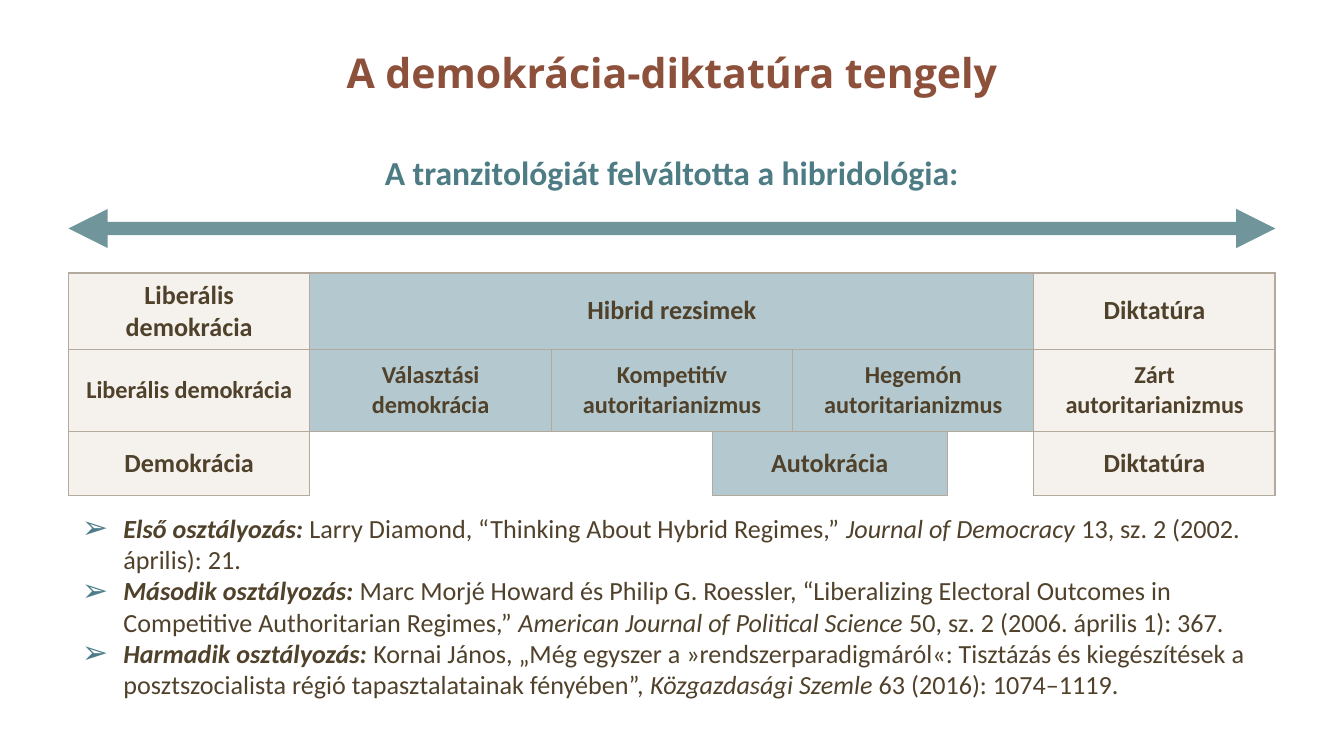
from lxml import etree
from pptx import Presentation
from pptx.dml.color import RGBColor
from pptx.enum.shapes import MSO_CONNECTOR
from pptx.enum.text import MSO_ANCHOR, MSO_AUTO_SIZE, PP_ALIGN
from pptx.oxml.ns import qn
from pptx.util import Inches, Pt

STRAIGHT = MSO_CONNECTOR.STRAIGHT
MIDDLE, TOP = MSO_ANCHOR.MIDDLE, MSO_ANCHOR.TOP
FIT_SHAPE = MSO_AUTO_SIZE.SHAPE_TO_FIT_TEXT
CENTER, LEFT = PP_ALIGN.CENTER, PP_ALIGN.LEFT

COLORS = {
    "title": "8D503B",
    "teal": "4D7C84",
    "bullet": "4D7C8B",
    "text": "50412B",
    "border": "B3A99D",
    "pole": "EFEAE4",
    "hybrid": "6B95A1",
}
ALPHA = {"pole": 60, "hybrid": 50}
NO_STYLE = "{2D5ABB26-0587-4C30-8999-92F81FD0307C}"
BODY_FONT = "Calibri"

WIDTH = 10
HEIGHT = WIDTH * 9 / 16
UNIT = 8.98 / 5
COLUMNS = [UNIT, UNIT, 1.2, UNIT - 1.2, 1.15, UNIT - 1.15, UNIT]
ROWS = [
    (0.51, 14, [("Liberális demokrácia", 1, "pole"), ("Hibrid rezsimek", 5, "hybrid"),
                ("Diktatúra", 1, "pole")]),
    (0.61, 13, [("Liberális demokrácia", 1, "pole"), ("Választási demokrácia", 1, "hybrid"),
                ("Kompetitív autoritarianizmus", 2, "hybrid"),
                ("Hegemón autoritarianizmus", 2, "hybrid"),
                ("Zárt autoritarianizmus", 1, "pole")]),
    (0.48, 14, [("Demokrácia", 1, "pole"), ("", 1, None), ("", 1, None),
                ("Autokrácia", 2, "hybrid"), ("", 1, None), ("Diktatúra", 1, "pole")]),
]
SOURCES = [
    [("Első osztályozás: ", True, True),
     ("Larry Diamond, “Thinking About Hybrid Regimes,” ", False, False),
     ("Journal of Democracy ", False, True),
     ("13, sz. 2 (2002. április): 21.", False, False)],
    [("Második osztályozás:", True, True),
     (" Marc Morjé Howard és Philip G. Roessler, “Liberalizing Electoral Outcomes in "
      "Competitive Authoritarian Regimes,” ", False, False),
     ("American Journal of Political Science ", False, True),
     ("50, sz. 2 (2006. április 1): 367.", False, False)],
    [("Harmadik osztályozás:", True, True),
     (" Kornai János, „Még egyszer a »rendszerparadigmáról«: Tisztázás és kiegészítések a "
      "posztszocialista régió tapasztalatainak fényében”, ", False, False),
     ("Közgazdasági Szemle ", False, True),
     ("63 (2016): 1074–1119.", False, False)],
]


def add(parent, tag, **attrs):
    return etree.SubElement(parent, qn(tag), attrs)


class Deck:
    def __init__(self, width, height):
        self.prs = Presentation()
        self.prs.slide_width, self.prs.slide_height = Inches(width), Inches(height)
        self.s = self.prs.slides.add_slide(self.prs.slide_layouts[6])

    def style(self, r, size, color, bold=True, italic=False, font=BODY_FONT):
        r.font.size, r.font.name = Pt(size), font
        r.font.bold, r.font.italic = bold, italic
        r.font.color.rgb = RGBColor.from_string(COLORS[color])

    def frame(self, box, anchor=TOP, grow=True):
        tf = self.s.shapes.add_textbox(*map(Inches, box)).text_frame
        tf.word_wrap, tf.vertical_anchor = True, anchor
        if grow:
            tf.auto_size = FIT_SHAPE
        return tf

    def heading(self, text, box, size, color, font=BODY_FONT, anchor=TOP, grow=True):
        tf = self.frame(box, anchor, grow)
        tf.text = text
        p = tf.paragraphs[0]
        p.alignment = CENTER
        self.style(p.runs[0], size, color, font=font)

    def bullets(self, items, box, size):
        tf = self.frame(box)
        for i, parts in enumerate(items):
            p = tf.add_paragraph() if i else tf.paragraphs[0]
            p.alignment = LEFT
            pPr = p._p.get_or_add_pPr()
            pPr.set("marL", str(Inches(0.31)))
            pPr.set("indent", str(-Inches(0.31)))
            add(add(pPr, "a:buClr"), "a:srgbClr", val=COLORS["bullet"])
            add(pPr, "a:buSzPct", val="120000")
            add(pPr, "a:buFont", typeface=BODY_FONT)
            add(pPr, "a:buChar", char="➢")
            for text, bold, italic in parts:
                r = p.add_run()
                r.text = text
                self.style(r, size, "text", bold, italic)

    def double_arrow(self, x1, x2, y, width, color, alpha):
        sp = self.s.shapes.add_connector(STRAIGHT, Inches(x1), Inches(y), Inches(x2), Inches(y))
        sp.line.width = Pt(width)
        sp.line.color.rgb = RGBColor.from_string(COLORS[color])
        ln = sp.line._ln
        add(ln.find(".//" + qn("a:srgbClr")), "a:alpha", val=str(alpha * 1000))
        add(ln, "a:headEnd", type="triangle")
        add(ln, "a:tailEnd", type="triangle")
        add(sp._element.spPr, "a:effectLst")

    def borders(self, cell, widths):
        tcPr = cell._tc.get_or_add_tcPr()
        for side in "LRTB":
            width = widths[side]
            ln = add(tcPr, "a:ln" + side, w=str(Pt(width)), cap="flat", cmpd="sng", algn="ctr")
            if width:
                add(add(ln, "a:solidFill"), "a:srgbClr", val=COLORS["border"])
                add(ln, "a:prstDash", val="solid")
            else:
                add(ln, "a:noFill")

    def cell(self, cell, text, size, fill):
        cell.vertical_anchor = MIDDLE
        if not fill:
            cell.fill.background()
            return
        cell.fill.solid()
        cell.fill.fore_color.rgb = RGBColor.from_string(COLORS[fill])
        clr = cell._tc.tcPr.find(qn("a:solidFill") + "/" + qn("a:srgbClr"))
        add(clr, "a:alpha", val=str(ALPHA[fill] * 1000))
        cell.text = text
        p = cell.text_frame.paragraphs[0]
        p.alignment = CENTER
        self.style(p.runs[0], size, "text")

    def table(self, x, y, columns, rows):
        height = sum(row[0] for row in rows)
        shape = self.s.shapes.add_table(len(rows), len(columns), Inches(x), Inches(y),
                                        Inches(sum(columns)), Inches(height))
        table = shape.table
        table.first_row = table.horz_banding = False
        table._tbl.tblPr.find(qn("a:tableStyleId")).text = NO_STYLE
        for column, width in zip(table.columns, columns):
            column.width = Inches(width)
        last_row, last_col = len(rows) - 1, len(columns) - 1
        for i, (row_height, size, cells) in enumerate(rows):
            table.rows[i].height = Inches(row_height)
            fills = [None] + [fill for _, _, fill in cells] + [None]
            col = 0
            for k, (text, span, fill) in enumerate(cells):
                end = col + span - 1
                widths = {
                    "L": 1 if col == 0 else 0.5 if fill or fills[k] else 0,
                    "R": 1 if end == last_col else 0.5 if fill or fills[k + 2] else 0,
                    "T": 0.5 if i else 1,
                    "B": 0 if not fill else 1 if i == last_row else 0.5,
                }
                if span > 1:
                    table.cell(i, col).merge(table.cell(i, end))
                for j in range(col, end + 1):
                    inner = {"L": widths["L"] if j == col else 0,
                             "R": widths["R"] if j in (col, end) else 0}
                    self.borders(table.cell(i, j), {**widths, **inner})
                self.cell(table.cell(i, col), text, size, fill)
                col = end + 1


def main():
    deck = Deck(WIDTH, HEIGHT)
    deck.heading("A demokrácia-diktatúra tengely", (0.12, 0, 9.76, 1.08), 22, "title",
                 "Open Sans", MIDDLE, False)
    deck.bullets(SOURCES, (0.51, 3.76, 8.98, 1.51), 14)
    deck.double_arrow(0.51, 9.49, 1.7, 7, "teal", 80)
    deck.heading("A tranzitológiát felváltotta a hibridológia:", (0.12, 1.08, 9.76, 0.4),
                 18, "teal")
    deck.table(0.51, 2.03, COLUMNS, ROWS)
    deck.prs.save("out.pptx")


if __name__ == "__main__":
    main()
